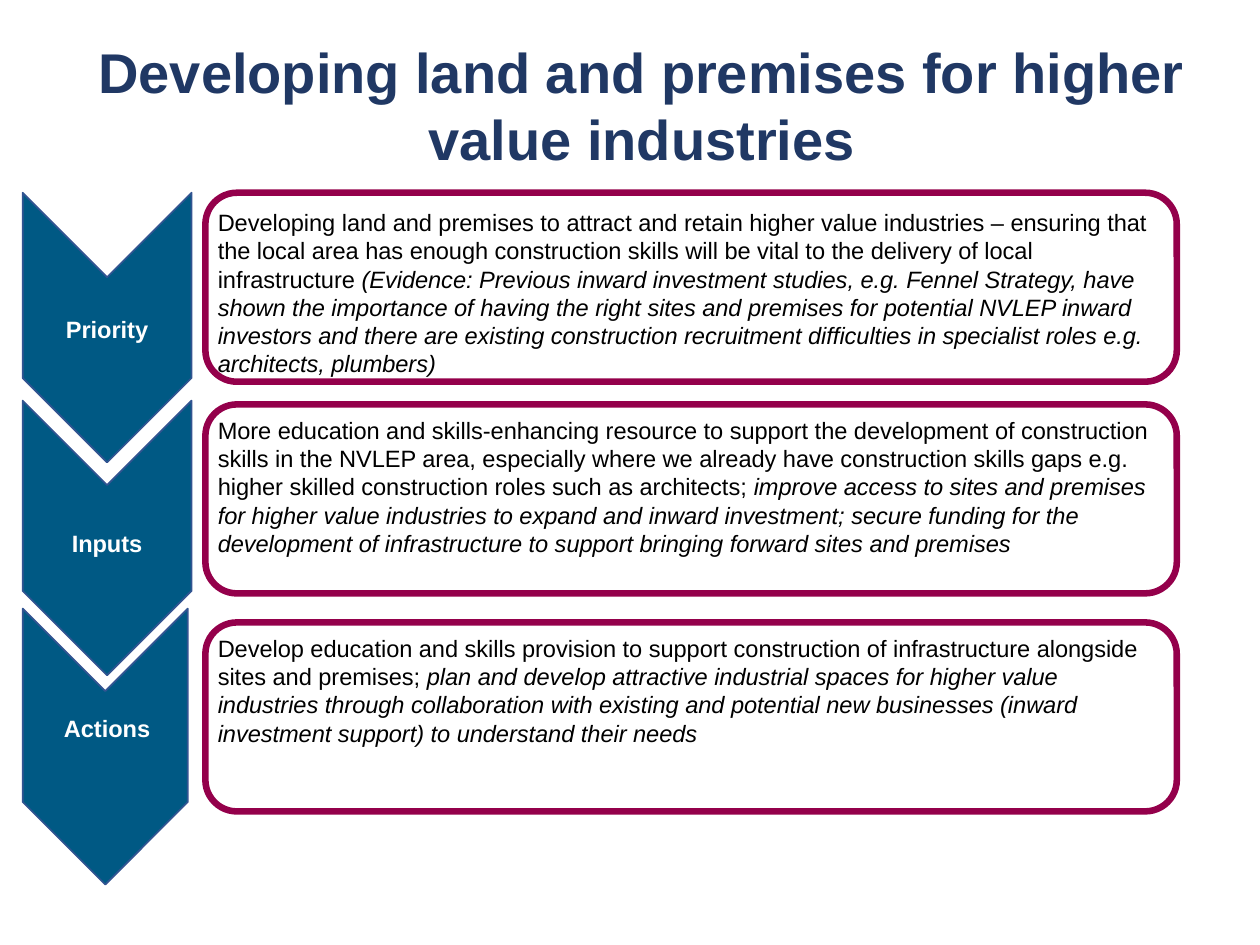
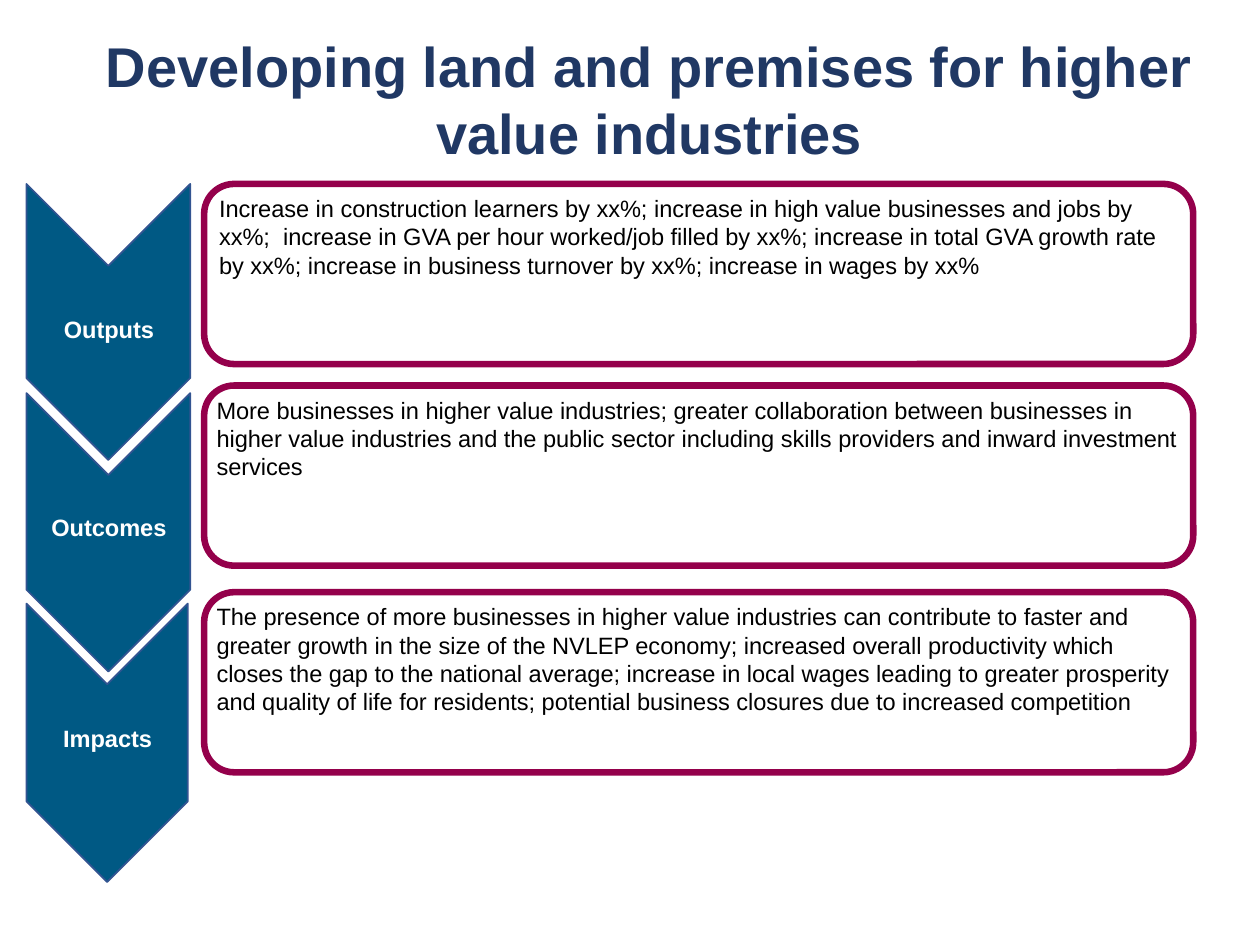
"""Build two slides that trace a development priority from inputs to impacts."""
import pptx
import pptx.dml.color
import pptx.enum.shapes
import pptx.enum.text
import pptx.util

COLOURS = {"title": "203864", "chevron": "005984", "chevron_edge": "325491",
           "frame": "94004B", "paper": "FFFFFF", "ink": "000000"}
FONT = "Arial"
TITLE = "Developing land and premises for higher value industries"

deck = pptx.Presentation()
deck.slide_width = pptx.util.Inches(10)
deck.slide_height = pptx.util.Inches(7.5)
COLUMN = deck.slide_width / 100
ROW = deck.slide_height / 75


def add_shape(page, kind, area, fill, edge, weight):
    """Add a filled and outlined shape; area is left, top, width, height in grid units."""
    left, top, width, height = area
    shape = page.shapes.add_shape(kind, round(left * COLUMN), round(top * ROW),
                                  round(width * COLUMN), round(height * ROW))
    shape.shadow.inherit = False
    shape.fill.solid()
    shape.fill.fore_color.rgb = pptx.dml.color.RGBColor.from_string(COLOURS[fill])
    shape.line.color.rgb = pptx.dml.color.RGBColor.from_string(COLOURS[edge])
    shape.line.width = pptx.util.Pt(weight)
    return shape


def add_text(page, area, spans, size, colour, heading=False):
    """Add one paragraph; the first span is upright and the second is italic."""
    left, top, width, height = area
    box = page.shapes.add_textbox(round(left * COLUMN), round(top * ROW),
                                  round(width * COLUMN), round(height * ROW))
    box.text_frame.word_wrap = True
    box.text_frame.auto_size = pptx.enum.text.MSO_AUTO_SIZE.SHAPE_TO_FIT_TEXT
    para = box.text_frame.paragraphs[0]
    if heading:
        para.alignment = pptx.enum.text.PP_ALIGN.CENTER
    for index, words in enumerate(spans):
        span = para.add_run()
        span.text = words
        span.font.name = FONT
        span.font.size = pptx.util.Pt(size)
        span.font.bold = heading
        span.font.italic = index == 1
        span.font.color.rgb = pptx.dml.color.RGBColor.from_string(COLOURS[colour])


pages = [
    {
        "title_at": (5.5, 2.5),
        "frame": (16.3, 77.1, 15),
        "chevron_left": 1.8,
        "steps": [
            {"label": "Priority", "label_at": (3.2, 24.5, 10.6), "chevron": (15.3, 13.4, 21.4),
             "frame_top": 15.3, "text_at": (16.3, 16), "text_height": 17.6,
             "spans": ["Developing land and premises to attract and retain higher value industries – "
                       "ensuring that the local area has enough construction skills will be vital to "
                       "the delivery of local infrastructure ",
                       "(Evidence: Previous inward investment studies, e.g. Fennel Strategy, have shown "
                       "the importance of having the right sites and premises for potential NVLEP inward "
                       "investors and there are existing construction recruitment difficulties in "
                       "specialist roles e.g. architects, plumbers)"]},
            {"label": "Inputs", "label_at": (3.2, 41.5, 10.6), "chevron": (31.8, 13.4, 21.8),
             "frame_top": 32.1, "text_at": (16.3, 32.5), "text_height": 17.6,
             "spans": ["More education and skills-enhancing resource to support the development of "
                       "construction skills in the NVLEP area, especially where we already have "
                       "construction skills gaps e.g. higher skilled construction roles such as "
                       "architects; ",
                       "improve access to sites and premises for higher value industries to expand and "
                       "inward investment; secure funding for the development of infrastructure to "
                       "support bringing forward sites and premises"]},
            {"label": "Actions", "label_at": (3.2, 56.2, 10.6), "chevron": (48.3, 13.1, 21.9),
             "frame_top": 49.4, "text_at": (16.3, 49.8), "text_height": 12.2,
             "spans": ["Develop education and skills provision to support construction of "
                       "infrastructure alongside sites and premises; ",
                       "plan and develop attractive industrial spaces for higher value industries "
                       "through collaboration with existing and potential new businesses (inward "
                       "investment support) to understand their needs"]},
        ],
    },
    {
        "title_at": (6.1, 2),
        "frame": (16.2, 78.5, 14.3),
        "chevron_left": 2.1,
        "steps": [
            {"label": "Outputs", "label_at": (3.5, 24.5, 10.3), "chevron": (14.6, 13, 21.9),
             "frame_top": 14.6, "text_at": (16.4, 14.9), "text_height": 8.9,
             "spans": ["Increase in construction learners by xx%; increase in high value businesses "
                       "and jobs by xx%;  increase in GVA per hour worked/job filled by xx%; increase "
                       "in total GVA growth rate by xx%; increase in business turnover by xx%; "
                       "increase in wages by xx%"]},
            {"label": "Outcomes", "label_at": (2.8, 40.2, 11.7), "chevron": (31.2, 13, 22.1),
             "frame_top": 30.6, "text_at": (16.2, 30.9), "text_height": 8.9,
             "spans": ["More businesses in higher value industries; greater collaboration between "
                       "businesses in higher value industries and the public sector including skills "
                       "providers and inward investment services"]},
            {"label": "Impacts", "label_at": (3.4, 57, 10.3), "chevron": (47.9, 12.8, 22.1),
             "frame_top": 47, "text_at": (16.2, 47.3), "text_height": 14.1,
             "spans": ["The presence of more businesses in higher value industries can contribute to "
                       "faster and greater growth in the size of the NVLEP economy; increased overall "
                       "productivity which closes the gap to the national average; increase in local "
                       "wages leading to greater prosperity and quality of life for residents; "
                       "potential business closures due to increased competition"]},
        ],
    },
]

for content in pages:
    page = deck.slides.add_slide(deck.slide_layouts[6])
    add_text(page, (*content["title_at"], 90.9, 11.8), [TITLE], 32, "title", heading=True)
    frame_left, frame_width, frame_height = content["frame"]

    for step in content["steps"]:
        add_shape(page, pptx.enum.shapes.MSO_SHAPE.ROUNDED_RECTANGLE,
                  (frame_left, step["frame_top"], frame_width, frame_height),
                  "paper", "frame", 3.75)
        add_text(page, (*step["text_at"], frame_width, step["text_height"]),
                 step["spans"], 13.5, "ink")

        top, breadth, length = step["chevron"]
        turn = (length - breadth) / 2
        chevron = add_shape(page, pptx.enum.shapes.MSO_SHAPE.CHEVRON,
                            (content["chevron_left"] - turn, top + turn, length, breadth),
                            "chevron", "chevron_edge", 1)
        chevron.rotation = 90

    for step in content["steps"]:
        add_text(page, (*step["label_at"], 3.3), [step["label"]], 13.5, "paper", heading=True)

deck.save("out.pptx")
